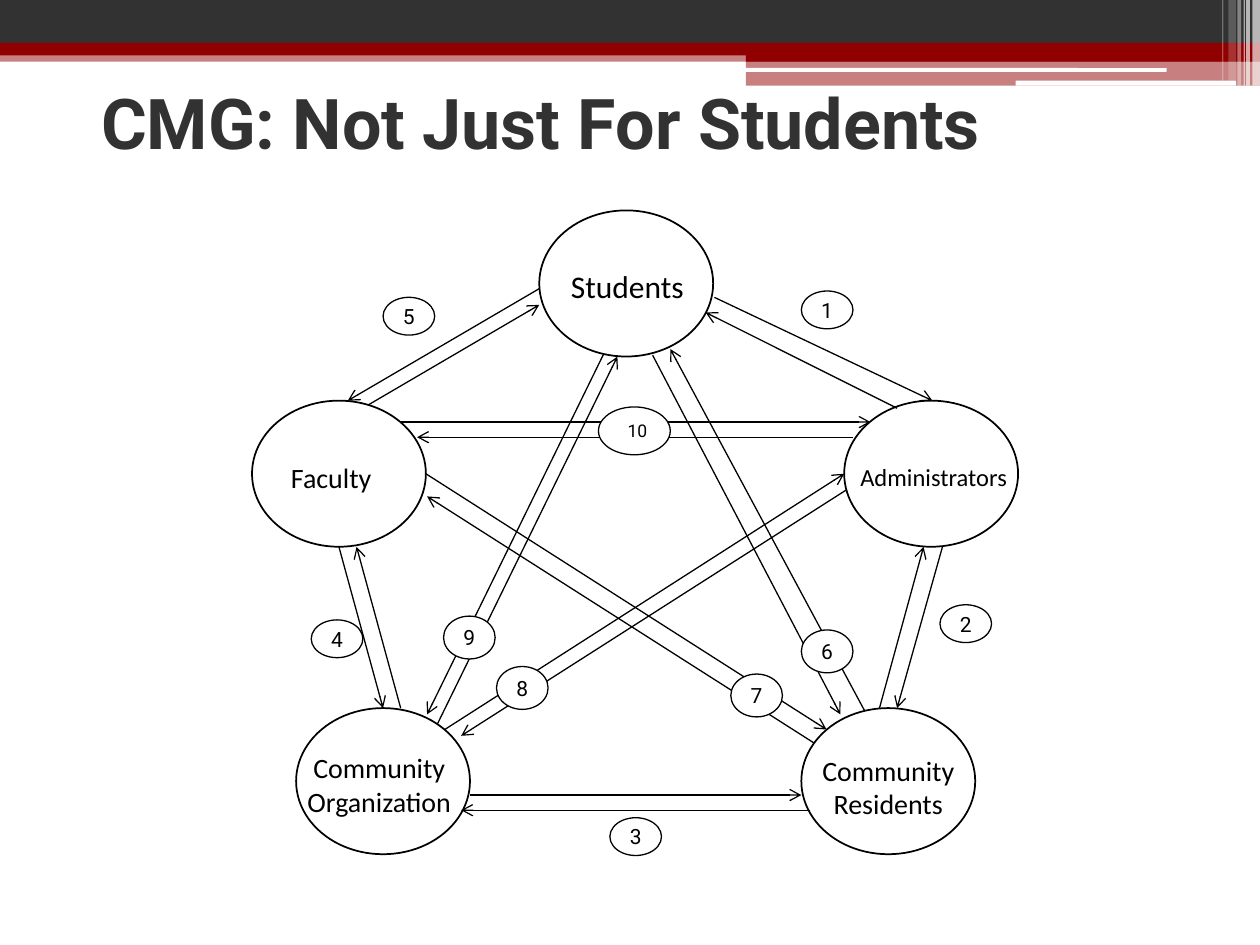
from lxml import etree
from pptx import Presentation
from pptx.dml.color import RGBColor
from pptx.enum.shapes import MSO_CONNECTOR, MSO_SHAPE
from pptx.enum.text import MSO_ANCHOR, PP_ALIGN
from pptx.oxml.ns import qn
from pptx.util import Inches, Pt

BLACK = RGBColor(0x00, 0x00, 0x00)
WHITE = RGBColor(0xFF, 0xFF, 0xFF)
CHARCOAL = RGBColor(0x32, 0x32, 0x32)
DARK_RED = RGBColor(0x90, 0x00, 0x00)
RECTANGLE = MSO_SHAPE.RECTANGLE
ROUNDED = MSO_SHAPE.ROUNDED_RECTANGLE
ELLIPSE = MSO_SHAPE.OVAL
STRAIGHT = MSO_CONNECTOR.STRAIGHT
TOP, MIDDLE = MSO_ANCHOR.TOP, MSO_ANCHOR.MIDDLE
CENTER, RIGHT = PP_ALIGN.CENTER, PP_ALIGN.RIGHT

BANDS = [
    (RECTANGLE, 0, 0.4, 10, 0.09, DARK_RED, 50),
    (RECTANGLE, 0, 0, 10, 0.34, CHARCOAL, 100),
    (RECTANGLE, 0, 0.34, 10, 0.1, DARK_RED, 100),
    (RECTANGLE, 5.92, 0.39, 4.08, 0.1, DARK_RED, 100),
    (RECTANGLE, 5.92, 0.48, 4.08, 0.2, DARK_RED, 50),
    (ROUNDED, 5.91, 0.54, 3.35, 0.03, WHITE, 100),
    (ROUNDED, 8.06, 0.64, 1.75, 0.04, WHITE, 100),
]
STRIPES = [
    (9.94, 0.06, 0.68, 65), (9.89, 0.03, 0.68, 65), (9.87, 0.01, 0.68, 60),
    (9.82, 0.03, 0.68, 40), (9.75, 0.06, 0.64, 20), (9.7, 0.01, 0.64, 30),
]
ARROWS_BEHIND = [
    (4.35, 2.25, 2.76, 3.18), (2.69, 3.35, 4.28, 2.42),
    (6.56, 5.96, 3.39, 3.94), (3.45, 5.79, 4.9, 2.83),
    (6.84, 3.81, 3.66, 5.84), (4.84, 2.71, 3.39, 5.67),
    (6.91, 5.73, 5.32, 2.77), (5.18, 2.82, 6.67, 5.67),
]
ARROWS_FRONT = [
    (3.73, 6.31, 6.36, 6.31), (7.12, 3.24, 5.6, 2.48),
    (6.98, 5.62, 7.33, 4.34), (7.48, 4.34, 7.12, 5.62),
    (6.43, 6.43, 3.66, 6.43), (3.18, 3.35, 6.91, 3.35),
    (6.77, 3.47, 3.31, 3.47), (5.67, 2.36, 7.4, 3.18),
    (2.69, 4.34, 3.04, 5.62), (3.18, 5.62, 2.83, 4.34),
    (3.53, 5.79, 6.7, 3.76), (3.38, 3.76, 6.56, 5.79),
]
NODES = [(4.28, 1.67), (2, 3.18), (6.7, 3.18), (2.35, 5.62), (6.36, 5.62)]
NODE_LABELS = [
    ([("Students", 18)], 4.36, 2.07, 1.24, 0.33),
    ([("Faculty", 16), (" ", 20)], 2.04, 3.55, 1.24, 0.35),
    ([("Administrators", 14)], 6.65, 3.62, 1.52, 0.27),
    ([("Community Organization", 16)], 2.32, 5.91, 1.38, 0.52),
    ([("Community Residents", 16)], 6.36, 5.93, 1.38, 0.52),
]
OPEN_BADGES = [(6.36, 2.31), (7.46, 4.8), (4.84, 6.49), (2.47, 4.92), (3.04, 2.36)]
FILLED_BADGES = [(6.36, 5), (5.8, 5.35), (3.94, 5.29), (3.52, 4.89)]


def add_shape(slide, kind, left, top, width, height, fill=None, opacity=100, line_width=None):
    """Add a shadowless preset shape with an optional fill and black outline."""
    box = [Inches(length) for length in (left, top, width, height)]
    shape = slide.shapes.add_shape(kind, *box)
    shape.shadow.inherit = False
    if fill is None:
        shape.fill.background()
    else:
        shape.fill.solid()
        shape.fill.fore_color.rgb = fill
    if opacity < 100:
        color = shape.fill._xPr.find(qn("a:solidFill"))[0]
        etree.SubElement(color, qn("a:alpha"), val=str(opacity * 1000))
    if line_width is None:
        shape.line.fill.background()
    else:
        shape.line.color.rgb = BLACK
        shape.line.width = Pt(line_width)
    return shape


def add_arrow(slide, *points):
    """Add a thin black line with an open arrowhead at its end."""
    connector = slide.shapes.add_connector(STRAIGHT, *[Inches(value) for value in points])
    connector.line.color.rgb = BLACK
    connector.line.width = Pt(0.75)
    etree.SubElement(connector.line._get_or_add_ln(), qn("a:tailEnd"), type="arrow")
    etree.SubElement(connector._element.spPr, qn("a:effectLst"))


def write_text(shape, runs, font_name, color=BLACK, bold=False,
               alignment=CENTER, anchor=TOP, wrap=True):
    """Write one paragraph of sized runs into a shape."""
    frame = shape.text_frame
    frame.word_wrap = wrap
    frame.vertical_anchor = anchor
    paragraph = frame.paragraphs[0]
    paragraph.alignment = alignment
    for text, size in runs:
        run = paragraph.add_run()
        run.text = text
        run.font.color.rgb = color
        font_format = {"name": font_name, "size": Pt(size), "bold": bold}
        for attribute, value in font_format.items():
            setattr(run.font, attribute, value)


def add_label(slide, runs, left, top, width, height, font_name, **text_format):
    """Add a text box holding one centred paragraph."""
    box = [Inches(length) for length in (left, top, width, height)]
    write_text(slide.shapes.add_textbox(*box), runs, font_name, **text_format)


def add_badge(slide, number, left, top, height, fill=None):
    """Add a small numbered ellipse."""
    badge = add_shape(slide, ELLIPSE, left, top, 0.41, height, fill, line_width=0.75)
    write_text(badge, [(str(number), 12)], "Roboto", anchor=MIDDLE, wrap=False)


def add_header(slide):
    """Draw the banded header and the slide title."""
    for band in BANDS:
        add_shape(slide, *band)
    for left, width, height, opacity in STRIPES:
        add_shape(slide, RECTANGLE, left, 0, width, height, WHITE, opacity)
    add_label(slide, [("CMG: Not Just For Students", 40)], 0, 0.58, 8.58, 1.25,
              "Roboto", color=CHARCOAL, bold=True)


def add_network(slide):
    """Draw the five groups, their two-way links and the link numbers."""
    for points in ARROWS_BEHIND:
        add_arrow(slide, *points)
    for left, top in NODES:
        add_shape(slide, ELLIPSE, left, top, 1.38, 1.16, WHITE, line_width=1)
    for label in NODE_LABELS:
        add_label(slide, *label, "Calibri")
    for points in ARROWS_FRONT:
        add_arrow(slide, *points)
    center_badge = add_shape(slide, ELLIPSE, 4.75, 3.23, 0.57, 0.38, WHITE, line_width=0.75)
    write_text(center_badge, [("10", 10)], "Roboto", alignment=RIGHT)
    for number, (left, top) in enumerate(OPEN_BADGES, 1):
        add_badge(slide, number, left, top, 0.3)
    for number, (left, top) in enumerate(FILLED_BADGES, 6):
        add_badge(slide, number, left, top, 0.34, WHITE)


def main():
    """Build and save the slide."""
    presentation = Presentation()
    presentation.slide_width = Inches(10)
    presentation.slide_height = Inches(7.5)
    slide = presentation.slides.add_slide(presentation.slide_layouts[6])
    add_header(slide)
    add_network(slide)
    presentation.save("out.pptx")


if __name__ == "__main__":
    main()
